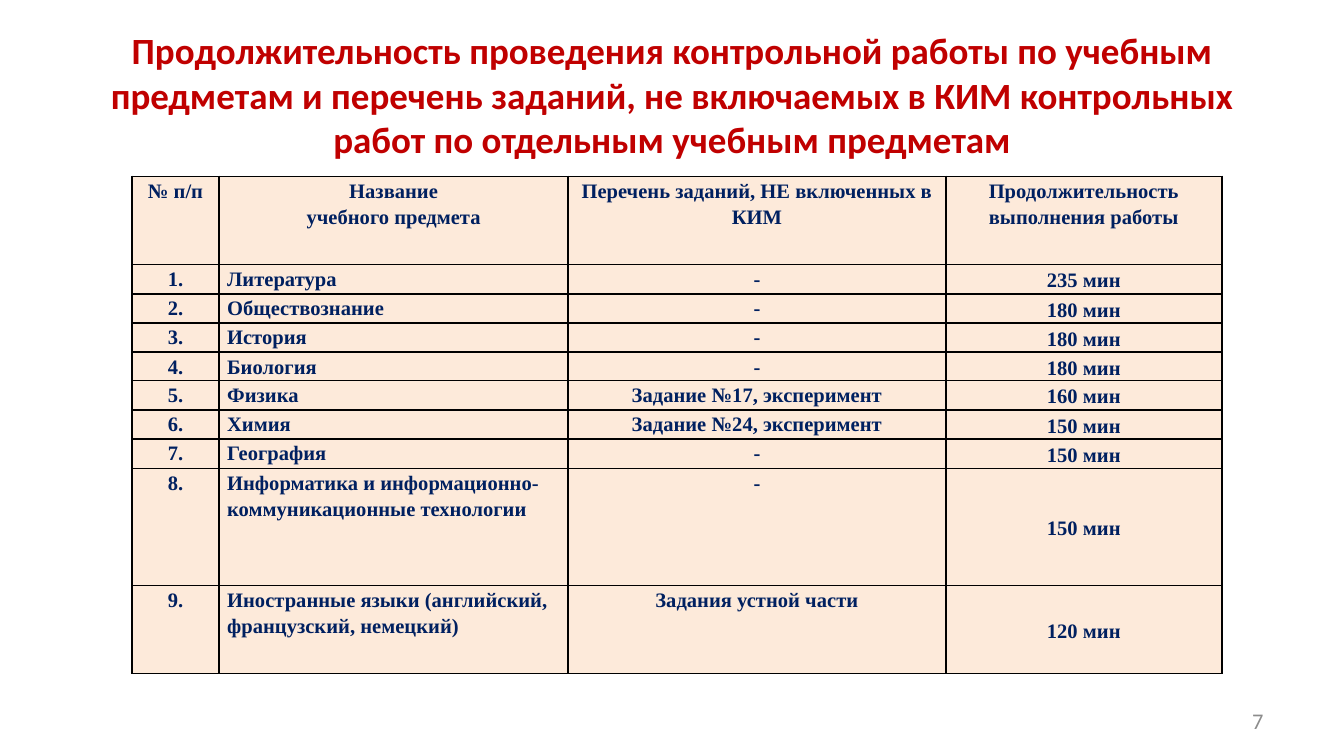
"""Build the slide listing test durations and excluded tasks by school subject."""
from lxml import etree
from pptx import Presentation, util as u
from pptx.dml.color import RGBColor
from pptx.enum import text
from pptx.oxml import ns

RED = RGBColor(0xC0, 0x00, 0x00)
NAVY = RGBColor(0x00, 0x20, 0x60)
PEACH = RGBColor(0xFD, 0xEA, 0xDA)
GREY = RGBColor(0x8C, 0x8C, 0x8C)
BLACK = RGBColor(0x00, 0x00, 0x00)
Pt = u.Pt
LEFT, CENTER, RIGHT = (text.PP_ALIGN.LEFT, text.PP_ALIGN.CENTER, text.PP_ALIGN.RIGHT)
TOP, MIDDLE = text.MSO_ANCHOR.TOP, text.MSO_ANCHOR.MIDDLE


def write(frame, wording, align, spacing, color, **font_format):
    frame.word_wrap = True
    frame.text = wording
    for paragraph in frame.paragraphs:
        paragraph.alignment = align
        paragraph.line_spacing = spacing
        paragraph.font.color.rgb = color
        for run in paragraph.runs:
            run.font.color.rgb = color
            for name, value in font_format.items():
                setattr(run.font, name, value)


def draw_borders(cell):
    properties = cell._tc.get_or_add_tcPr()
    for position, side in enumerate(("lnL", "lnR", "lnT", "lnB")):
        line = etree.Element(ns.qn(f"a:{side}"), w=str(Pt(1)))
        fill = etree.SubElement(line, ns.qn("a:solidFill"))
        etree.SubElement(fill, ns.qn("a:srgbClr"), val=str(BLACK))
        properties.insert(position, line)


deck = Presentation()
deck.slide_width, deck.slide_height = Pt(720), Pt(405)
slide = deck.slides.add_slide(deck.slide_layouts[6])

heading = slide.shapes.add_textbox(Pt(36), Pt(16.6), Pt(648), Pt(68)).text_frame
heading.vertical_anchor = MIDDLE
write(heading,
      "Продолжительность проведения контрольной работы по учебным предметам "
      "и перечень заданий, не включаемых в КИМ контрольных работ "
      "по отдельным учебным предметам",
      CENTER, 1.0, RED, name="Calibri", size=Pt(19.8), bold=True)

header = ("№ п/п", "Название\nучебного предмета",
          "Перечень заданий, НЕ включенных в КИМ",
          "Продолжительность выполнения работы")
subjects = [
    ("Литература", "-", 235, 15.7),
    ("Обществознание", "-", 180, 15.7),
    ("История", "-", 180, 15.7),
    ("Биология", "-", 180, 13.9),
    ("Физика", "Задание №17, эксперимент", 160, 15.7),
    ("Химия", "Задание №24, эксперимент", 150, 15.7),
    ("География", "-", 150, 15.7),
    ("Информатика и информационно-коммуникационные технологии", "-", 150, 62.7),
    ("Иностранные языки (английский, французский, немецкий)",
     "Задания устной части", 120, 47.2),
]
rows = [header] + [(f"{number}.", subject, excluded, f"{minutes} мин")
                   for number, (subject, excluded, minutes, _) in enumerate(subjects, 1)]
heights = [47.2] + [subject[-1] for subject in subjects]
widths = [46.8, 187, 202.3, 147.9]

durations = slide.shapes.add_table(len(rows), len(widths), Pt(70.6), Pt(94.5),
                                   Pt(sum(widths)), Pt(sum(heights))).table
durations.first_row = durations.horz_banding = False
for column, width in zip(durations.columns, widths):
    column.width = Pt(width)
cell_format = dict(margin_left=Pt(4.3), margin_right=Pt(4.3), margin_top=0, margin_bottom=0)
for r, (row, height) in enumerate(zip(rows, heights)):
    durations.rows[r].height = Pt(height)
    for c, wording in enumerate(row):
        cell = durations.cell(r, c)
        for name, value in cell_format.items():
            setattr(cell, name, value)
        cell.vertical_anchor = MIDDLE if r and c == 3 else TOP
        cell.fill.solid()
        cell.fill.fore_color.rgb = PEACH
        draw_borders(cell)
        write(cell.text_frame, wording, LEFT if r and c == 1 else CENTER, 1.15, NAVY,
              name="Times New Roman", size=Pt(11), bold=True)

page_number = slide.shapes.add_textbox(Pt(516), Pt(375.2), Pt(168), Pt(21.6)).text_frame
page_number.vertical_anchor = MIDDLE
write(page_number, "7", RIGHT, 1.0, GREY, name="Calibri", size=Pt(12))

deck.save("out.pptx")
